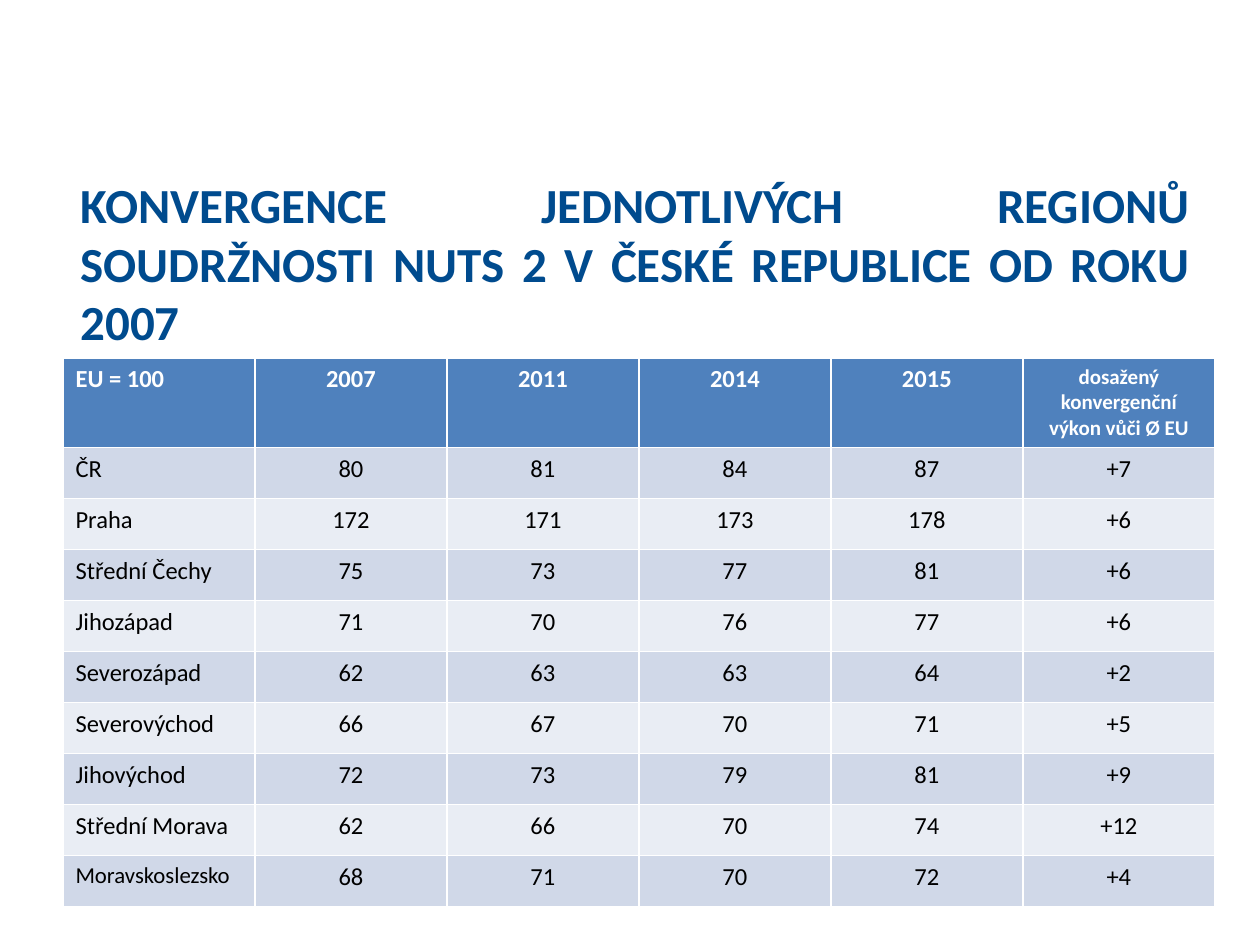
from pptx import Presentation
from pptx import util as u
from pptx.dml.color import RGBColor
from pptx.enum import text

TITLE = "KONVERGENCE JEDNOTLIVÝCH REGIONŮ SOUDRŽNOSTI NUTS 2 V ČESKÉ REPUBLICE OD ROKU 2007"
HEAD = ("EU = 100", "2007", "2011", "2014", "2015", "dosažený konvergenční výkon vůči Ø EU")
ROWS = [
    ("ČR", 80, 81, 84, 87, "+7"),
    ("Praha", 172, 171, 173, 178, "+6"),
    ("Střední Čechy", 75, 73, 77, 81, "+6"),
    ("Jihozápad", 71, 70, 76, 77, "+6"),
    ("Severozápad", 62, 63, 63, 64, "+2"),
    ("Severovýchod", 66, 67, 70, 71, "+5"),
    ("Jihovýchod", 72, 73, 79, 81, "+9"),
    ("Střední Morava", 62, 66, 70, 74, "+12"),
    ("Moravskoslezsko", 68, 71, 70, 72, "+4"),
]
SMALL = {HEAD[-1]: 12, "Moravskoslezsko": 13}
BANDS = ("E9EDF4", "D0D8E8")
LEFT, TOP, COL, HIGH, ROW = 63, 358, 192, 88, 51


def px(n):
    return u.Emu(n * 914400 // 126)


def color(code):
    return RGBColor.from_string(code)


def write(frame, words, size, code, bold, align):
    frame.text = str(words)
    para = frame.paragraphs[0]
    para.alignment = align
    font = para.runs[0].font
    font.name, font.size, font.bold = "Calibri", u.Pt(size), bold
    font.color.rgb = color(code)


def main():
    deck = Presentation()
    deck.slide_width, deck.slide_height = px(1260), px(945)
    slide = deck.slides.add_slide(deck.slide_layouts[5])

    title = slide.shapes.title
    title.left, title.top, title.width, title.height = map(px, (68, 168, 1134, 74))
    frame = title.text_frame
    frame.word_wrap = True
    frame.auto_size = text.MSO_AUTO_SIZE.NONE
    frame.vertical_anchor = text.MSO_ANCHOR.TOP
    write(frame, TITLE, 28, "004B8E", True, text.PP_ALIGN.JUSTIFY)

    data = [HEAD] + ROWS
    area = map(px, (LEFT, TOP, COL * len(HEAD), HIGH + ROW * len(ROWS)))
    table = slide.shapes.add_table(len(data), len(HEAD), *area).table
    for col in table.columns:
        col.width = px(COL)
    for r, line in enumerate(data):
        top = r == 0
        table.rows[r].height = px(HIGH if top else ROW)
        for c, words in enumerate(line):
            cell = table.cell(r, c)
            cell.fill.solid()
            cell.fill.fore_color.rgb = color("4F81BD" if top else BANDS[r % 2])
            align = text.PP_ALIGN.CENTER if c else text.PP_ALIGN.LEFT
            write(cell.text_frame, words, SMALL.get(words, 14),
                  "FFFFFF" if top else "000000", top, align)

    deck.save("out.pptx")


if __name__ == "__main__":
    main()
